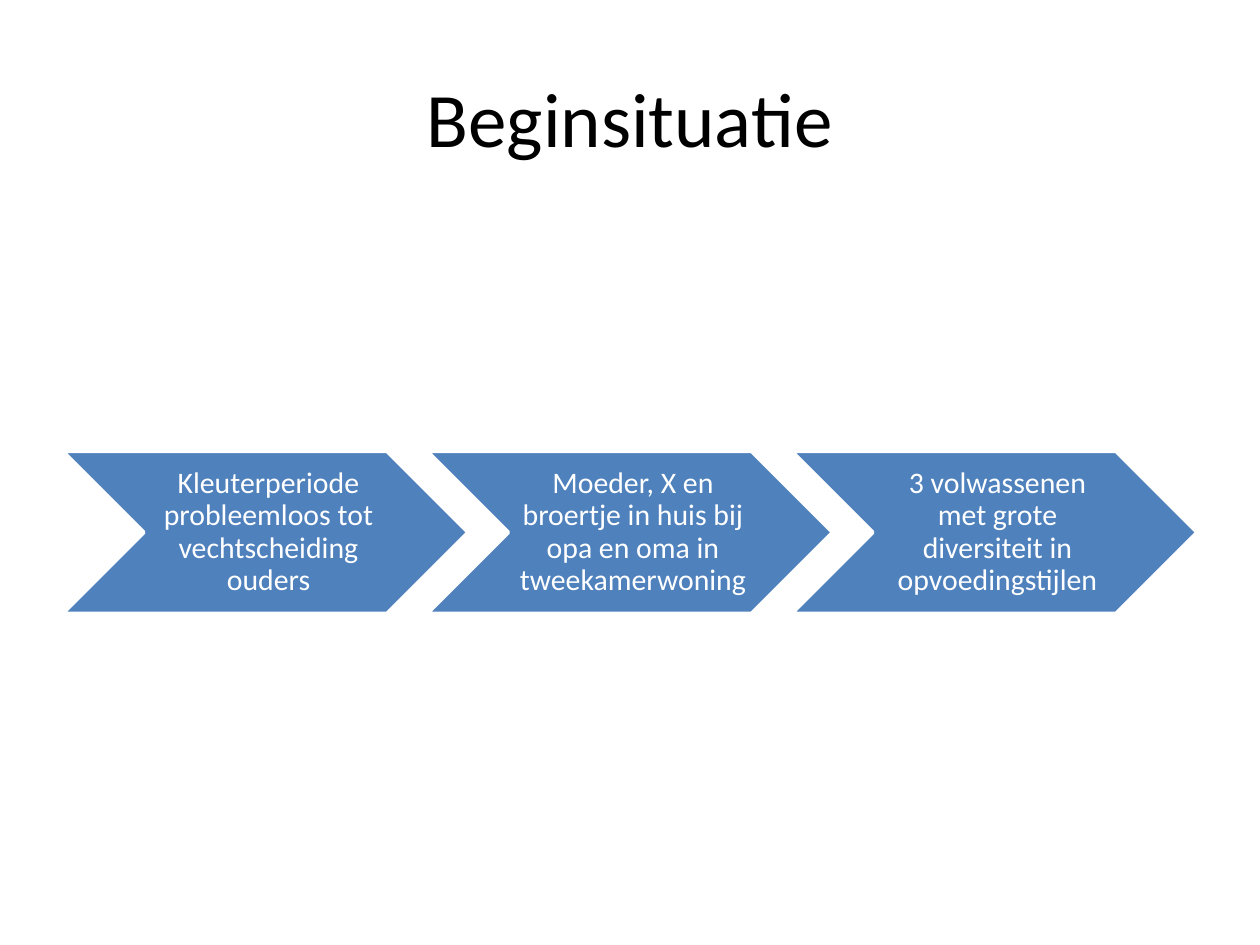
from dataclasses import dataclass

from pptx import Presentation
from pptx import util as u
from pptx.dml.color import RGBColor
from pptx.enum import shapes, text


@dataclass(frozen=True)
class Theme:
    font: str = "Calibri"
    title_size: float = 44
    step_size: float = 17
    ink: str = "000000"
    paper: str = "FFFFFF"
    accent: str = "4F81BD"


class SlideBuilder:
    """Draws styled elements on the current page."""

    def __init__(self, page, theme):
        self.page = page
        self.theme = theme

    def add_words(self, shape, words, size, color, spacing=1.0):
        frame = shape.text_frame
        frame.word_wrap = True
        frame.vertical_anchor = text.MSO_ANCHOR.MIDDLE
        para = frame.paragraphs[0]
        para.alignment = text.PP_ALIGN.CENTER
        para.line_spacing = spacing
        span = para.add_run()
        span.text = words
        span.font.name = self.theme.font
        span.font.size = u.Pt(size)
        span.font.color.rgb = RGBColor.from_string(color)
        return frame

    def title(self, words, left, top, width, height):
        box = self.page.shapes.add_textbox(*map(u.Pt, (left, top, width, height)))
        self.add_words(box, words, self.theme.title_size, self.theme.ink)

    def chevron(self, words, left, top, width, height):
        step = self.page.shapes.add_shape(
            shapes.MSO_SHAPE.CHEVRON, *map(u.Pt, (left, top, width, height))
        )
        step.adjustments[0] = 0.5
        step.shadow.inherit = False
        step.fill.solid()
        step.fill.fore_color.rgb = RGBColor.from_string(self.theme.accent)
        step.line.color.rgb = RGBColor.from_string(self.theme.paper)
        step.line.width = u.Pt(2)
        frame = self.add_words(step, words, self.theme.step_size, self.theme.paper, 0.9)
        frame.margin_left = u.Pt(5)
        frame.margin_top = frame.margin_right = frame.margin_bottom = u.Pt(1.5)

    def process(self, steps, left, middle, width):
        overlap = 0.1
        step_width = width / (len(steps) - overlap * (len(steps) - 1))
        step_height = 0.4 * step_width
        pitch = (1 - overlap) * step_width
        for index, words in enumerate(steps):
            self.chevron(words, left + index * pitch, middle - step_height / 2,
                         step_width, step_height)


def main():
    deck = Presentation()
    deck.slide_width, deck.slide_height = u.Pt(720), u.Pt(540)
    page = deck.slides.add_slide(deck.slide_layouts[6])
    builder = SlideBuilder(page, Theme())
    builder.title("Beginsituatie", 36, 21.6, 648, 90)
    steps = [
        "Kleuterperiode probleemloos tot vechtscheiding ouders",
        "Moeder, X en broertje in huis bij opa en oma in tweekamerwoning",
        "3 volwassenen met grote diversiteit in opvoedingstijlen",
    ]
    builder.process(steps, left=36, middle=304.2, width=648)
    deck.save("out.pptx")


if __name__ == "__main__":
    main()
